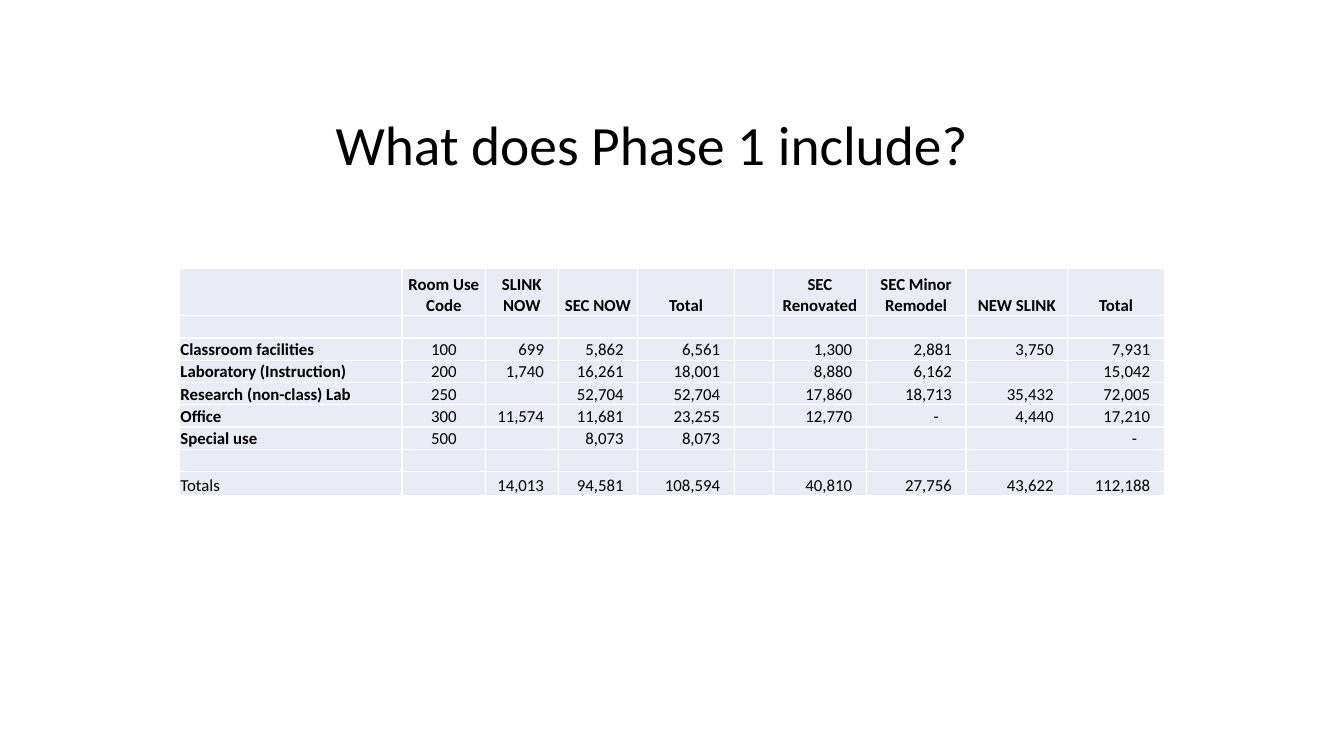
from dataclasses import dataclass

from lxml.etree import SubElement
from pptx import Presentation
from pptx.dml.color import RGBColor
from pptx.enum.text import MSO_ANCHOR, PP_ALIGN
from pptx.oxml.ns import qn
from pptx.util import Inches, Pt


@dataclass(frozen=True)
class Theme:
    font: str = "Calibri"
    ink: str = "000000"
    fill: str = "E9EBF5"
    rule: str = "FFFFFF"
    rule_size: float = 1
    title_size: float = 39.6
    cell_size: float = 12


THEME = Theme()
WIDTHS = [2.21, 0.83, 0.72, 0.79, 0.96, 0.39, 0.92, 0.99, 1.01, 0.96]
HEIGHTS = [0.47] + [0.22] * 7 + [0.24]
BLANK = [""] * len(WIDTHS)
ROWS = [
    ["", "Room Use Code", "SLINK NOW", "SEC NOW", "Total", "",
     "SEC Renovated", "SEC Minor Remodel", "NEW SLINK", "Total"],
    BLANK,
    ["Classroom facilities", "100", "699", "5,862", "6,561", "",
     "1,300", "2,881", "3,750", "7,931"],
    ["Laboratory (Instruction)", "200", "1,740", "16,261", "18,001", "",
     "8,880", "6,162", "", "15,042"],
    ["Research (non-class) Lab", "250", "", "52,704", "52,704", "",
     "17,860", "18,713", "35,432", "72,005"],
    ["Office", "300", "11,574", "11,681", "23,255", "",
     "12,770", "-", "4,440", "17,210"],
    ["Special use", "500", "", "8,073", "8,073", "", "", "", "", "-"],
    BLANK,
    ["Totals", "", "14,013", "94,581", "108,594", "",
     "40,810", "27,756", "43,622", "112,188"],
]


def add_run(para, text, size, bold=False):
    run = para.add_run()
    run.text = text
    run.font.name = THEME.font
    run.font.size = Pt(size)
    run.font.bold = bold
    run.font.color.rgb = RGBColor.from_string(THEME.ink)


def add_rules(cell):
    """Draw the cell's four borders, which must come before its fill."""
    props = cell._tc.get_or_add_tcPr()
    for side in ("lnL", "lnR", "lnT", "lnB"):
        line = SubElement(props, qn(f"a:{side}"), w=str(Pt(THEME.rule_size)))
        paint = SubElement(line, qn("a:solidFill"))
        SubElement(paint, qn("a:srgbClr"), val=THEME.rule)


def fill_cell(cell, text, row, col):
    add_rules(cell)
    cell.fill.solid()
    cell.fill.fore_color.rgb = RGBColor.from_string(THEME.fill)
    cell.vertical_anchor = MSO_ANCHOR.BOTTOM
    cell.margin_left = cell.margin_top = cell.margin_right = Inches(0.01)
    cell.margin_bottom = 0
    para = cell.text_frame.paragraphs[0]
    if not text:
        # Keeps an empty cell from stretching its row
        SubElement(para._p, qn("a:endParaRPr"), sz=str(int(THEME.cell_size * 100)))
        return
    head = row == 0
    if head or col == 1:
        para.alignment = PP_ALIGN.CENTER
    elif col > 1:
        para.alignment = PP_ALIGN.RIGHT
        cell.margin_right = Inches(0.27 if text == "-" else 0.14)
    label = col == 0 and row < len(ROWS) - 1
    add_run(para, text, THEME.cell_size, head or label)


def add_title(slide, left, top, width, height):
    box = slide.shapes.add_textbox(*map(Inches, (left, top, width, height)))
    frame = box.text_frame
    frame.word_wrap = True
    frame.vertical_anchor = MSO_ANCHOR.MIDDLE
    para = frame.paragraphs[0]
    para.line_spacing = 0.9
    add_run(para, "What does Phase 1 include?", THEME.title_size)


def add_rooms(slide, left, top, width, height):
    """Add the room table, scaling its columns and rows to the box."""
    place = map(Inches, (left, top, width, height))
    table = slide.shapes.add_table(len(ROWS), len(WIDTHS), *place).table
    table.first_row = table.horz_banding = False
    for col, size in zip(table.columns, WIDTHS):
        col.width = Inches(size * width / sum(WIDTHS))
    for row, size in zip(table.rows, HEIGHTS):
        row.height = Inches(size * height / sum(HEIGHTS))
    for i, row in enumerate(ROWS):
        for j, text in enumerate(row):
            fill_cell(table.cell(i, j), text, i, j)


def main():
    deck = Presentation()
    deck.slide_width, deck.slide_height = Inches(13.33), Inches(7.5)
    slide = deck.slides.add_slide(deck.slide_layouts[6])
    add_rooms(slide, 1.78, 2.66, 9.77, 2.26)
    add_title(slide, 3.23, 1.07, 6.88, 0.78)
    deck.save("out.pptx")


if __name__ == "__main__":
    main()
